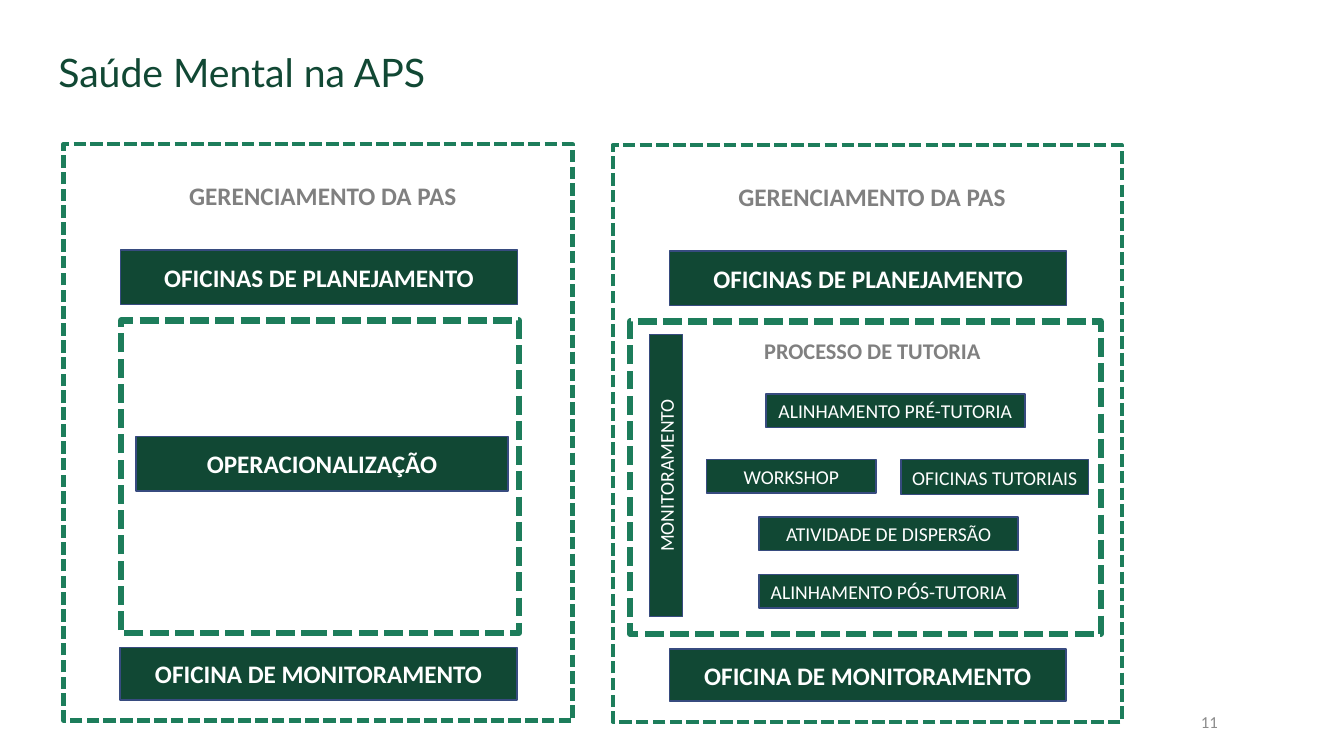
from pptx import Presentation
from pptx.dml.color import RGBColor
from pptx.enum.dml import MSO_LINE
from pptx.enum.shapes import MSO_SHAPE
from pptx.enum.text import MSO_ANCHOR, PP_ALIGN
from pptx.util import Cm, Pt

RECTANGLE = MSO_SHAPE.RECTANGLE
SQUARE_DOT = MSO_LINE.SQUARE_DOT
TOP, MIDDLE = MSO_ANCHOR.TOP, MSO_ANCHOR.MIDDLE
LEFT, CENTER, RIGHT = PP_ALIGN.LEFT, PP_ALIGN.CENTER, PP_ALIGN.RIGHT

COLORS = {
    "green": "114834",
    "dots": "1D7D5B",
    "outline": "374B7F",
    "white": "FFFFFF",
    "heading": "808080",
    "number": "8C8C8C",
}


def color(name):
    return RGBColor.from_string(COLORS[name])


def write(frame, text, size=18, ink="white", bold=False, font="Calibri",
          align=CENTER, anchor=MIDDLE, wrap=True):
    frame.word_wrap = wrap
    frame.vertical_anchor = anchor
    paragraph = frame.paragraphs[0]
    paragraph.alignment = align
    run = paragraph.add_run()
    run.text = text
    run.font.size = Pt(size)
    run.font.name = font
    run.font.bold = bold
    run.font.color.rgb = color(ink)


class Board:
    """Draws the panels, bars and labels of one slide in a shared style."""

    def __init__(self, slide):
        self.shapes = slide.shapes

    def rectangle(self, box, line, width):
        shape = self.shapes.add_shape(RECTANGLE, *map(Cm, box))
        shape.shadow.inherit = False
        shape.line.color.rgb = color(line)
        shape.line.width = Pt(width)
        return shape

    def bar(self, text, *box, size=18, bold=True, rotation=0):
        shape = self.rectangle(box, "outline", 1)
        shape.fill.solid()
        shape.fill.fore_color.rgb = color("green")
        shape.rotation = rotation
        write(shape.text_frame, text, size=size, bold=bold, wrap=False)

    def step(self, text, *box, rotation=0):
        self.bar(text, *box, size=14, bold=False, rotation=rotation)

    def dotted_frame(self, *box, width):
        shape = self.rectangle(box, "dots", width)
        shape.fill.background()
        shape.line.dash_style = SQUARE_DOT

    def label(self, text, *box, **style):
        frame = self.shapes.add_textbox(*map(Cm, box)).text_frame
        write(frame, text, **style)

    def heading(self, text, *box, size=18):
        self.label(text, *box, size=size, ink="heading", bold=True)

    def management_panel(self, dx, dy):
        self.dotted_frame(1.6 + dx, 3.63 + dy, 12.83, 14.53, width=3)
        self.heading("GERENCIAMENTO DA PAS", 4.06 + dx, 4.45 + dy, 8.15, 0.94)
        self.bar("OFICINAS DE PLANEJAMENTO", 3.04 + dx, 6.3 + dy, 10, 1.37)
        self.bar("OFICINA DE MONITORAMENTO", 3.03 + dx, 16.32 + dy, 10, 1.32)


def main():
    presentation = Presentation()
    presentation.slide_width = Cm(33.87)
    presentation.slide_height = Cm(19.05)
    board = Board(presentation.slides.add_slide(presentation.slide_layouts[6]))

    board.label("Saúde Mental na APS", 1.22, 1.09, 17.98, 1.45, size=28,
                ink="green", font="Lato", align=LEFT, anchor=TOP)
    board.label("11", 23.32, 17.68, 7.62, 1.02, size=12, ink="number", align=RIGHT)

    for dx, dy in ((0, 0), (13.84, 0.03)):
        board.management_panel(dx, dy)

    board.dotted_frame(3.05, 8.08, 10.03, 7.87, width=4.5)
    board.bar("OPERACIONALIZAÇÃO", 3.43, 11, 9.37, 1.37)

    board.dotted_frame(15.88, 8.1, 11.86, 7.87, width=4.5)
    board.heading("PROCESSO DE TUTORIA", 17.91, 8.36, 8.15, 0.94, size=16)
    board.step("MONITORAMENTO", 13.23, 11.56, 7.11, 0.84, rotation=270)
    for text, left, top, width, height in (
        ("ALINHAMENTO PRÉ-TUTORIA", 19.3, 9.93, 6.53, 0.84),
        ("WORKSHOP", 17.81, 11.58, 4.27, 0.84),
        ("OFICINAS TUTORIAIS", 22.71, 11.58, 4.72, 0.89),
        ("ATIVIDADE DE DISPERSÃO", 19.13, 13.03, 6.53, 0.84),
        ("ALINHAMENTO PÓS-TUTORIA", 19.13, 14.48, 6.53, 0.84),
    ):
        board.step(text, left, top, width, height)

    presentation.save("out.pptx")


if __name__ == "__main__":
    main()
